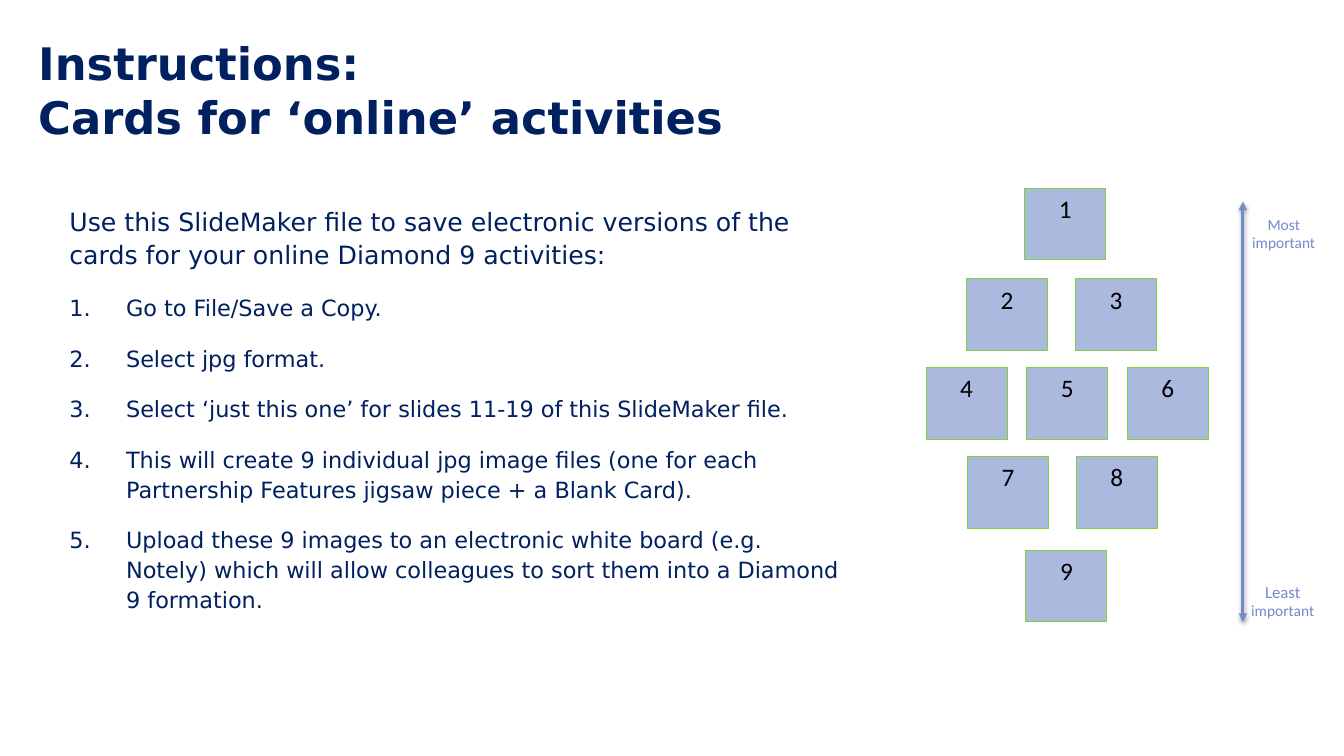
import pptx
import pptx.util
import pptx.dml.color
import pptx.enum.shapes
import pptx.enum.text
from lxml import etree
from pptx.oxml.ns import qn

Pt = pptx.util.Pt
ALIGN = pptx.enum.text.PP_ALIGN
ANCHOR = pptx.enum.text.MSO_ANCHOR
COLOURS = {
    "navy": "002060",
    "card": "ABB9DE",
    "card_edge": "7FD13B",
    "scale": "738AC8",
    "black": "000000",
}
HEADING_FONT, CARD_FONT = "DejaVu Sans", "Calibri"

TITLE_LINES = ["Instructions:", "Cards for ‘online’ activities"]
INTRO = ("Use this SlideMaker file to save electronic versions of the "
         "cards for your online Diamond 9 activities:")
STEPS = [
    "Go to File/Save a Copy.",
    "Select jpg format.",
    "Select ‘just this one’ for slides 11-19 of this SlideMaker file.",
    "This will create 9 individual jpg image files (one for each "
    "Partnership Features jigsaw piece + a Blank Card).",
    "Upload these 9 images to an electronic white board (e.g. Notely) "
    "which will allow colleagues to sort them into a Diamond 9 formation.",
]
# Diamond rows: top, first left, pitch, number of cards
CARD_ROWS = [
    (0, 70.5, 0, 1),
    (64.6, 28.8, 77.8, 2),
    (128, 0, 71.8, 3),
    (191.5, 29.5, 77.8, 2),
    (258.5, 71.3, 0, 1),
]
CARD_WIDTH, CARD_HEIGHT = 57.9, 51.1


def colour(name):
    return pptx.dml.color.RGBColor.from_string(COLOURS[name])


def style(font, size, name, tint, bold=False):
    font.size, font.name, font.bold = Pt(size), name, bold
    font.color.rgb = colour(tint)


def add_text_frame(page, box):
    frame = page.shapes.add_textbox(*map(Pt, box)).text_frame
    frame.word_wrap = True
    return frame


def add_title(page, box):
    frame = add_text_frame(page, box)
    frame.vertical_anchor = ANCHOR.MIDDLE
    para = frame.paragraphs[0]
    para.text = "\v".join(TITLE_LINES)
    style(para.font, 32, HEADING_FONT, "navy", bold=True)


def add_instructions(page, box):
    frame = add_text_frame(page, box)
    for index, text in enumerate([INTRO] + STEPS):
        para = frame.paragraphs[0] if index == 0 else frame.add_paragraph()
        para.text = text
        para.line_spacing, para.space_after = 1.1, Pt(12)
        if index:
            para.space_before = Pt(3.2)
            properties = para._p.get_or_add_pPr()
            properties.set("marL", str(Pt(40.5)))
            properties.set("indent", str(-Pt(40.5)))
            etree.SubElement(properties, qn("a:buAutoNum"), type="arabicPeriod")
        style(para.font, 16 if index else 18, HEADING_FONT, "navy")


def add_card(page, box, number):
    card = page.shapes.add_shape(
        pptx.enum.shapes.MSO_SHAPE.RECTANGLE, *map(Pt, box))
    card.shadow.inherit = False
    card.fill.solid()
    card.fill.fore_color.rgb = colour("card")
    card.line.color.rgb = colour("card_edge")
    card.line.width = Pt(0.75)
    card.text_frame.vertical_anchor = ANCHOR.TOP
    para = card.text_frame.paragraphs[0]
    para.text = str(number)
    para.alignment = ALIGN.CENTER
    style(para.font, 18, CARD_FONT, "black")


def add_diamond(page, left, top):
    number = 1
    for row_top, first_left, pitch, count in CARD_ROWS:
        for column in range(count):
            box = (left + first_left + column * pitch, top + row_top,
                   CARD_WIDTH, CARD_HEIGHT)
            add_card(page, box, number)
            number += 1


def add_scale(page, left, top, height):
    # Double-headed arrow with a soft shadow
    arrow = page.shapes.add_connector(
        pptx.enum.shapes.MSO_CONNECTOR.STRAIGHT,
        Pt(left), Pt(top), Pt(left), Pt(top + height))
    arrow.line.color.rgb = colour("scale")
    arrow.line.width = Pt(2)
    outline = arrow.line._get_or_add_ln()
    for end in ("a:headEnd", "a:tailEnd"):
        etree.SubElement(outline, qn(end), type="triangle")
    effects = etree.SubElement(arrow._element.spPr, qn("a:effectLst"))
    shadow = etree.SubElement(
        effects, qn("a:outerShdw"), blurRad=str(Pt(3.1)), dist=str(Pt(1.6)),
        dir="5400000", rotWithShape="0")
    tint = etree.SubElement(shadow, qn("a:srgbClr"), val=COLOURS["black"])
    etree.SubElement(tint, qn("a:alpha"), val="38000")

    # Labels at both ends
    labels = [("Most ", 11, -3.6, 5.8), ("Least ", 12, -4.3, 267.8)]
    for word, size, shift, drop in labels:
        frame = add_text_frame(page, (left + shift, top + drop, 65.5, 31))
        para = frame.paragraphs[0]
        para.alignment = ALIGN.CENTER
        for text, span_size in ((word, size), ("important", 11)):
            span = para.add_run()
            span.text = text
            style(span.font, span_size, CARD_FONT, "scale")


def main():
    deck = pptx.Presentation()
    deck.slide_width, deck.slide_height = Pt(960), Pt(540)
    page = deck.slides.add_slide(deck.slide_layouts[6])
    add_title(page, (20.2, 10.8, 696.2, 106.6))
    add_instructions(page, (42.5, 141.8, 568.1, 309.6))
    add_diamond(page, 661.5, 134.6)
    add_scale(page, 887.8, 144, 300.2)
    deck.save("out.pptx")


if __name__ == "__main__":
    main()
